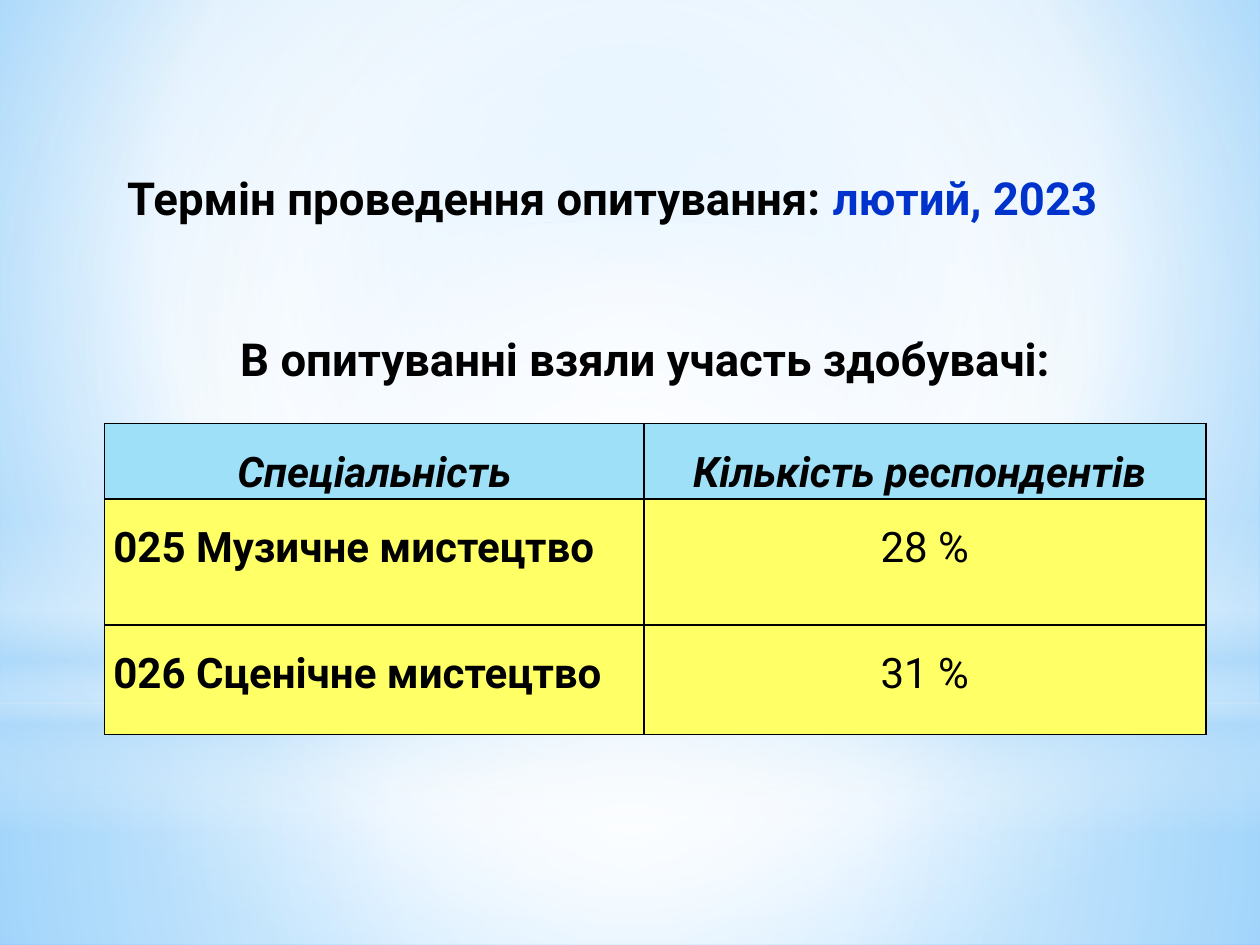
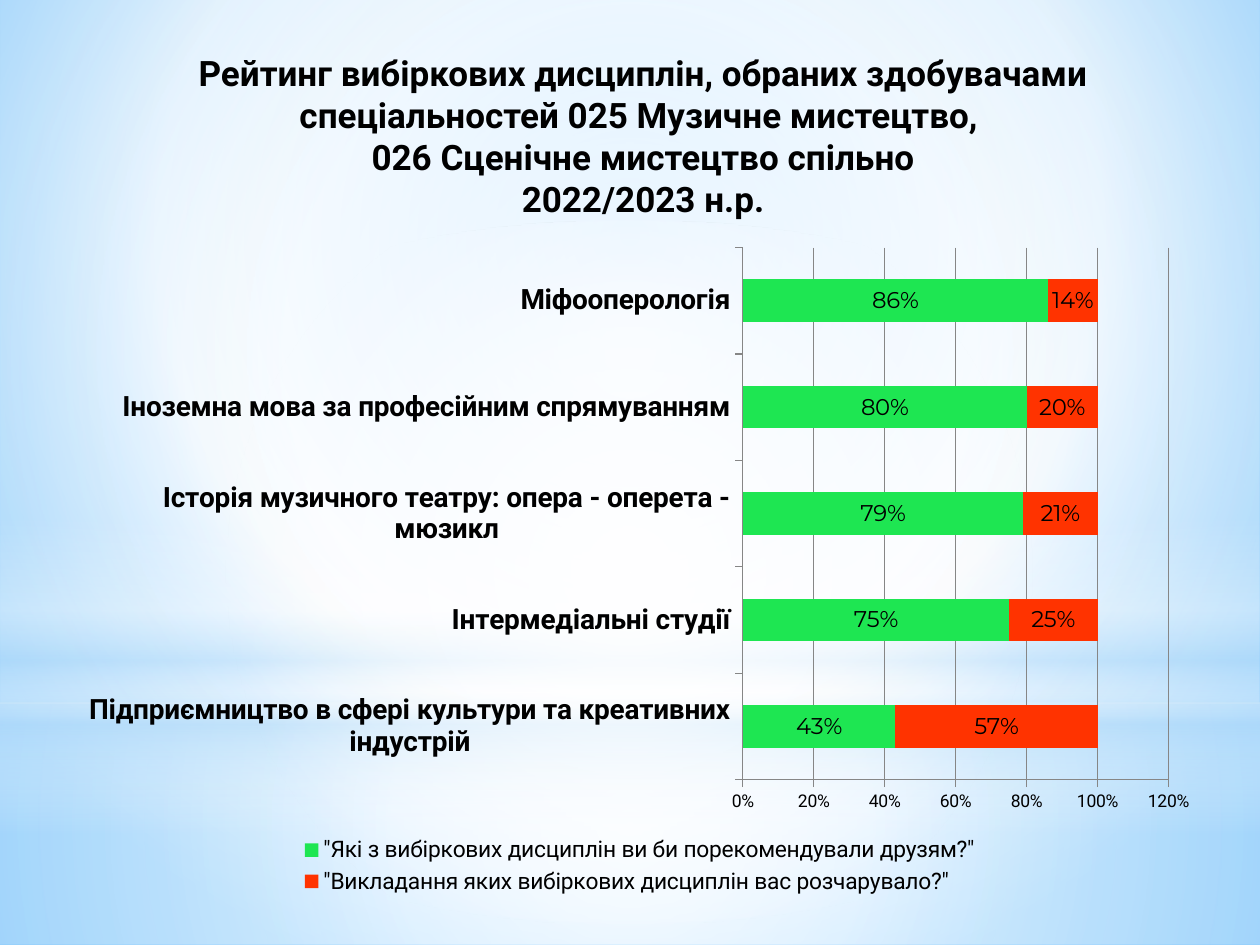
from lxml.etree import Element, SubElement
from pptx import Presentation
from pptx.chart.data import CategoryChartData
from pptx.dml.color import RGBColor
from pptx.enum.chart import XL_CHART_TYPE as Chart, XL_LABEL_POSITION as Spot
from pptx.enum.chart import XL_LEGEND_POSITION as Side, XL_TICK_MARK as Tick
from pptx.enum.shapes import MSO_SHAPE as Kind
from pptx.enum.text import MSO_ANCHOR as Anchor, MSO_AUTO_SIZE as Auto, PP_ALIGN as Align
from pptx.oxml.ns import qn
from pptx.util import Inches, Pt

BLACK = RGBColor(0x00, 0x00, 0x00)
WHITE = RGBColor(0xFF, 0xFF, 0xFF)
BLUE = RGBColor(0x00, 0x33, 0xCC)
HEAD = RGBColor(0x9E, 0xE0, 0xF8)
YELLOW = RGBColor(0xFF, 0xFF, 0x66)
GREEN = RGBColor(0x1E, 0xE6, 0x52)
RED = RGBColor(0xFF, 0x33, 0x00)
GRAY = RGBColor(0x86, 0x86, 0x86)
SKY = RGBColor(0xB4, 0xDC, 0xFA)
PALE = RGBColor(0x9E, 0xD5, 0xFF)
DEEP = RGBColor(0x5B, 0xB9, 0xFF)
FONT = "Roboto"
MID = (50, 50, 50, 50)

# Shared glow: shape, box, stops (place, colour, opacity), focus
GLOW = [
    (Kind.RECTANGLE, (0, 5.58, 10, 1.92),
     [(0, WHITE, 91), (37, WHITE, 76), (100, SKY, 79)], MID),
    (Kind.RECTANGLE, (0, 0, 10, 5.58),
     [(0, WHITE, 89), (48, WHITE, 62), (100, SKY, 79)], MID),
    (Kind.RECTANGLE, (0, 4.12, 10, 2.5),
     [(0, WHITE, 0), (29, WHITE, 30), (45, SKY, 40), (55, WHITE, 26),
      (65, SKY, 60), (100, WHITE, 0)], None),
    (Kind.OVAL, (0, 1.75, 10, 5.58), [(0, WHITE, 100), (56, WHITE, 0)], MID),
]


def inches(box):
    return [Inches(v) for v in box]


def style(font, size, color=BLACK, bold=False, italic=False, name=FONT):
    font.name, font.size = name, Pt(size)
    font.bold, font.italic = bold, italic
    font.color.rgb = color


def write(frame, *lines, align=Align.CENTER, space=None, indent=0, **look):
    """Fill a frame; each line is a text or a list of (text, colour)."""
    frame.word_wrap = True
    for n, line in enumerate(lines):
        para = frame.add_paragraph() if n else frame.paragraphs[0]
        para.alignment, para.line_spacing = align, space
        if indent:
            props = para._p.get_or_add_pPr()
            props.set("marL", str(Inches(indent)))
            props.set("indent", "0")
        for text, color in [(line, BLACK)] if isinstance(line, str) else line:
            run = para.add_run()
            run.text = text
            style(run.font, color=color, **look)


def blend(props, stops, focus):
    """Turn the solid fill in props into a gradient."""
    grad = Element(qn("a:gradFill"), rotWithShape="1")
    row = SubElement(grad, qn("a:gsLst"))
    for place, color, alpha in stops:
        stop = SubElement(row, qn("a:gs"), pos=str(place * 1000))
        tint = SubElement(stop, qn("a:srgbClr"), val=str(color))
        if alpha < 100:
            SubElement(tint, qn("a:alpha"), val=str(alpha * 1000))
    if focus:
        ring = SubElement(grad, qn("a:path"), path="circle")
        SubElement(ring, qn("a:fillToRect"),
                   {k: str(v * 1000) for k, v in zip("ltrb", focus)})
    else:
        SubElement(grad, qn("a:lin"), ang="5400000", scaled="0")
    props.replace(props.find(qn("a:solidFill")), grad)


def backdrop(master, slide):
    """Set the master's background and move the glow shapes into it."""
    master.background.fill.solid()
    blend(master.element.find(".//" + qn("p:bgPr")),
          [(0, PALE, 100), (60, WHITE, 100), (100, DEEP, 100)], (20, 10, 20, 60))
    tree = master.shapes.element
    for n, (kind, box, stops, focus) in enumerate(GLOW):
        shape = slide.shapes.add_shape(kind, *inches(box))
        shape.shadow.inherit = False
        shape.fill.solid()
        shape.line.fill.background()
        blend(shape.element.spPr, stops, focus)
        shape.element.nvSpPr.cNvPr.set("id", str(20 + n))
        tree.insert(2 + n, shape.element)


def title(slide, box, *lines, **look):
    shape = slide.shapes.title
    shape.left, shape.top, shape.width, shape.height = inches(box)
    frame = shape.text_frame
    frame.auto_size, frame.vertical_anchor = Auto.NONE, Anchor.TOP
    write(frame, *lines, bold=True, **look)


def edge(cell):
    props = cell._tc.get_or_add_tcPr()
    for side in "LRTB":
        line = SubElement(props, qn("a:ln" + side), w=str(Pt(1)))
        fill = SubElement(line, qn("a:solidFill"))
        SubElement(fill, qn("a:srgbClr"), val=str(BLACK))


def table(slide, box, rows, widths, heights):
    grid = slide.shapes.add_table(len(rows), len(widths), *inches(box)).table
    for col, width in zip(grid.columns, widths):
        col.width = Inches(width)
    for r, (row, height) in enumerate(zip(rows, heights)):
        grid.rows[r].height = Inches(height)
        for c, text in enumerate(row):
            cell = grid.cell(r, c)
            edge(cell)
            cell.fill.solid()
            cell.fill.fore_color.rgb = YELLOW if r else HEAD
            cell.margin_left = cell.margin_right = Inches(0.07)
            cell.margin_top = cell.margin_bottom = 0
            write(cell.text_frame, text, size=24, space=1.5,
                  align=Align.LEFT if r and not c else Align.CENTER,
                  bold=not r or not c, italic=not r)


def place(chart, x, y, w, h):
    """Fix the inner plot area as shares of the chart."""
    area = chart._chartSpace.chart.plotArea
    old = area.find(qn("c:layout"))
    if old is not None:
        area.remove(old)
    outer = Element(qn("c:layout"))
    area.insert(0, outer)
    inner = SubElement(outer, qn("c:manualLayout"))
    for tag, val in [("layoutTarget", "inner"), ("xMode", "edge"),
                     ("yMode", "edge"), ("x", x), ("y", y), ("w", w), ("h", h)]:
        SubElement(inner, qn("c:" + tag), val=str(val))


def bars(slide, box, cats, series):
    data = CategoryChartData(number_format="0%")
    data.categories = cats
    for name, vals, _ in series:
        data.add_series(name, vals)
    chart = slide.shapes.add_chart(Chart.BAR_STACKED, *inches(box), data).chart
    chart.has_title = False
    style(chart.font, 10)
    place(chart, 0.59, 0.02, 0.37, 0.8)

    # Bars and their labels
    plot = chart.plots[0]
    plot.gap_width, plot.overlap, plot.vary_by_categories = 150, 100, False
    for bar, (_, _, color) in zip(plot.series, series):
        bar.format.fill.solid()
        bar.format.fill.fore_color.rgb = color
        tags = bar.data_labels
        tags.show_value, tags.position = True, Spot.CENTER
        tags.number_format, tags.number_format_is_linked = "0%", False
        style(tags.font, 13, name="Montserrat")

    # Axes
    names, scale = chart.category_axis, chart.value_axis
    for axis in (names, scale):
        axis.major_tick_mark, axis.minor_tick_mark = Tick.OUTSIDE, Tick.NONE
        axis.format.line.color.rgb = GRAY
    style(names.tick_labels.font, 16, bold=True)
    style(scale.tick_labels.font, 10)
    names.has_major_gridlines = False
    scale.minimum_scale, scale.maximum_scale, scale.major_unit = 0, 1.2, 0.2
    scale.tick_labels.number_format = "0%"
    scale.tick_labels.number_format_is_linked = False
    scale.has_major_gridlines = True
    scale.major_gridlines.format.line.color.rgb = GRAY

    # Legend
    chart.has_legend = True
    chart.legend.position = Side.BOTTOM
    chart.legend.include_in_layout = False
    style(chart.legend.font, 13)


def survey(slide):
    title(slide, (0.91, 1.3, 8.35, 0.66),
          [("Термін проведення опитування: ", BLACK), ("лютий, 2023", BLUE)],
          size=26, align=Align.JUSTIFY)
    note = slide.shapes.add_textbox(*inches((0.95, 2.58, 8.35, 0.66)))
    write(note.text_frame, "В опитуванні взяли участь здобувачі:", size=26, bold=True)
    table(slide, (0.83, 3.36, 8.74, 2.41),
          [("Спеціальність", "Кількість респондентів "),
           ("025 Музичне мистецтво", "28 %"),
           ("026 Сценічне мистецтво", "31 %")],
          (4.28, 4.46), (0.55, 1, 0.87))


def rating(slide):
    bars(slide, (0.51, 1.86, 9.13, 5.28),
         ["Підприємництво в сфері культури та креативних індустрій",
          "Інтермедіальні студії",
          "Історія музичного театру: опера - оперета - мюзикл",
          "Іноземна мова за професійним спрямуванням",
          "Міфооперологія"],
         [('"Які з вибіркових дисциплін ви би порекомендували друзям?"',
           (0.43, 0.75, 0.79, 0.8, 0.86), GREEN),
          ('"Викладання яких вибіркових дисциплін вас розчарувало?"',
           (0.57, 0.25, 0.21, 0.2, 0.14), RED)])
    title(slide, (0.75, 0.36, 8.66, 1.42),
          "Рейтинг вибіркових дисциплін, обраних здобувачами "
          "спеціальностей 025 Музичне мистецтво, ",
          "026 Сценічне мистецтво спільно", "2022/2023 н.р.",
          size=20, indent=0.05)


def main():
    deck = Presentation()
    deck.slide_width, deck.slide_height = Inches(10), Inches(7.5)
    first, second = [deck.slides.add_slide(deck.slide_layouts[5]) for _ in range(2)]
    backdrop(deck.slide_master, first)
    survey(first)
    rating(second)
    deck.save("out.pptx")


if __name__ == "__main__":
    main()
